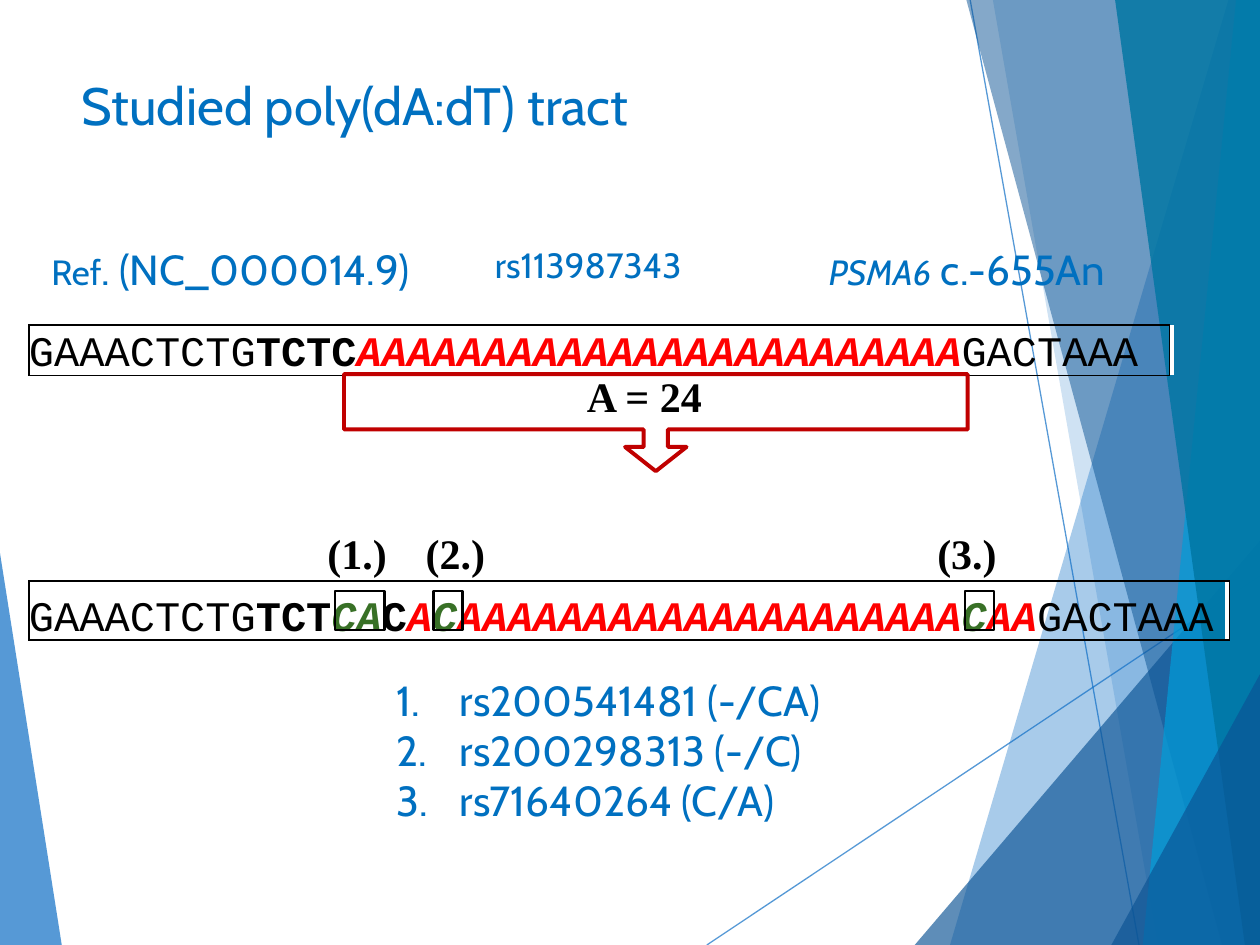
from dataclasses import dataclass

from lxml.etree import SubElement as Sub
from pptx import Presentation
from pptx.dml.color import RGBColor as Rgb
from pptx.enum.shapes import MSO_CONNECTOR as Link, MSO_SHAPE as Kind
from pptx.enum.text import MSO_ANCHOR as Anchor, MSO_AUTO_SIZE as Fit, PP_ALIGN as Align
from pptx.oxml.ns import qn
from pptx.util import Inches, Pt

UNIT = 0.1  # grid step: 100 columns by 75 rows
COLS, ROWS = 100, 75


@dataclass(frozen=True)
class Theme:
    text: str = "0070C0"
    ink: str = "000000"
    paper: str = "FFFFFF"
    red: str = "FF0000"
    green: str = "387026"
    frame: str = "C00000"
    blue: str = "0F6FC6"
    navy: str = "0B5394"
    sky: str = "009DD9"
    teal: str = "0076A3"
    sans: str = "Cabin"
    mono: str = "Courier New"
    serif: str = "Times New Roman"
    head: int = 30
    large: int = 24
    small: int = 20


def grid(*vals):
    return [Inches(val * UNIT) for val in vals]


def tint(fill, color, share):
    """Give a solid fill a colour and an opacity in percent."""
    fill.solid()
    fill.fore_color.rgb = Rgb.from_string(color)
    node = fill._xPr.find(qn("a:solidFill"))[0]
    Sub(node, qn("a:alpha"), val=str(share * 1000))


class Deck:
    def __init__(self, theme):
        self.theme = theme
        self.file = Presentation()
        self.file.slide_width, self.file.slide_height = grid(COLS, ROWS)
        self.slide = self.file.slides.add_slide(self.file.slide_layouts[1])
        self.shapes = self.slide.shapes

    # Text
    def run(self, para, text, size=None, font=None, color=None, bold=False, slant=False):
        part = para.add_run()
        part.text = text
        face = part.font
        face.size = Pt(size or self.theme.large)
        face.name = font or self.theme.sans
        face.color.rgb = Rgb.from_string(color or self.theme.text)
        face.bold, face.italic = bold, slant

    def place(self, shape, box):
        """Move a template placeholder to its box, above the backdrop."""
        self.shapes._spTree.append(shape._element)
        shape.left, shape.top, shape.width, shape.height = grid(*box)
        frame = shape.text_frame
        frame.auto_size = Fit.NONE
        frame.vertical_anchor = Anchor.TOP
        return frame

    def title(self, box, text):
        para = self.place(self.shapes.title, box).paragraphs[0]
        para.alignment = Align.LEFT
        self.run(para, text, self.theme.head)

    def steps(self, box, items):
        frame = self.place(self.slide.placeholders[1], box)
        for num, item in enumerate(items):
            para = frame.add_paragraph() if num else frame.paragraphs[0]
            para.space_before = Pt(0)
            self.run(para, item)
            props = para._p.get_or_add_pPr()
            props.set("marL", str(Inches(0.5)))
            props.set("indent", str(-Inches(0.5)))
            Sub(Sub(props, qn("a:buClr")), qn("a:srgbClr"), val=self.theme.text)
            Sub(props, qn("a:buFont"), typeface=self.theme.sans)
            Sub(props, qn("a:buAutoNum"), type="arabicPeriod")

    def label(self, box, *runs):
        frame = self.shapes.add_textbox(*grid(*box)).text_frame
        frame.word_wrap = False
        frame.auto_size = Fit.SHAPE_TO_FIT_TEXT
        for text, look in runs:
            self.run(frame.paragraphs[0], text, **look)

    # Shapes
    def outline(self, kind, box, color, width, adjust=()):
        shape = self.shapes.add_shape(kind, *grid(*box))
        shape.shadow.inherit = False
        shape.fill.background()
        shape.line.color.rgb = Rgb.from_string(color)
        shape.line.width = Pt(width)
        for num, val in enumerate(adjust):
            shape.adjustments[num] = val

    def shard(self, color, share, *points):
        first, *rest = [grid(*point) for point in points]
        pen = self.shapes.build_freeform(*first)
        pen.add_line_segments(rest, close=True)
        shape = pen.convert_to_shape()
        shape.shadow.inherit = False
        tint(shape.fill, color, share)
        shape.line.fill.background()

    def line(self, start, end, color, share):
        link = self.shapes.add_connector(Link.STRAIGHT, *grid(*start, *end))
        Sub(link._element.spPr, qn("a:effectLst"))
        link.line.width = Pt(0.75)
        tint(link.line.fill, color, share)
        # the effect list must follow the line
        props = link._element.spPr
        props.append(props.find(qn("a:effectLst")))

    # Tables
    def edge(self, cell, sides):
        props = cell._tc.get_or_add_tcPr()
        for side in "LRTB":
            rule = Sub(props, qn("a:ln" + side), w=str(Pt(1)))
            if side in sides:
                Sub(Sub(rule, qn("a:solidFill")), qn("a:srgbClr"), val=self.theme.ink)
            else:
                Sub(rule, qn("a:noFill"))

    def strand(self, box, runs, sides):
        """A sequence cell followed by a narrow white end cell."""
        table = self.shapes.add_table(1, 2, *grid(*box)).table
        table.first_row = table.horz_banding = False
        end = 0.4
        table.columns[0].width, table.columns[1].width = grid(box[2] - end, end)
        for num, edges in enumerate(sides):
            cell = table.cell(0, num)
            cell.margin_left = cell.margin_right = cell.margin_bottom = 0
            cell.margin_top = Inches(0.04)
            cell.vertical_anchor = Anchor.BOTTOM
            self.edge(cell, edges)
        table.cell(0, 0).fill.background()
        table.cell(0, 1).fill.solid()
        table.cell(0, 1).fill.fore_color.rgb = Rgb.from_string(self.theme.paper)
        para = table.cell(0, 0).text_frame.paragraphs[0]
        para.line_spacing = 0.89
        for text, look in runs:
            self.run(para, text, font=self.theme.mono, **look)


def main():
    theme = Theme()
    deck = Deck(theme)

    # Backdrop
    deck.shard(theme.blue, 70, (0, 43.9), (4.9, ROWS), (0, ROWS))
    deck.line((56.1, ROWS), (COLS, 45.7), theme.blue, 70)
    deck.line((77, 0), (90.4, ROWS), theme.blue, 70)
    right = (COLS, ROWS), (COLS, 0)
    for color, share, top, foot in (
        (theme.blue, 36, 97.5, 75.4),
        (theme.blue, 20, 78.8, 91.9),
    ):
        deck.shard(color, share, (top, 0), (foot, ROWS), *right)
    deck.shard(theme.navy, 66, (72.6, ROWS), (COLS, 42.9), (COLS, ROWS))
    for color, share, top, foot in (
        (theme.navy, 50, 76.7, 97),
        (theme.sky, 70, 98.1, 90.7),
        (theme.teal, 82, 88.5, 98.8),
    ):
        deck.shard(color, share, (top, 0), (foot, ROWS), *right)
    deck.shard(theme.navy, 66, (88.2, ROWS), (COLS, 53.5), (COLS, ROWS))

    # Looks of the sequence parts
    plain = dict(color=theme.ink)
    bold = dict(color=theme.ink, bold=True)
    tract = dict(color=theme.red, bold=True, slant=True)
    change = dict(color=theme.green, bold=True, slant=True)
    start, tail = ("GAAACTCTG", plain), ("GACTAAA", plain)
    note = dict(font=theme.serif, **bold)

    # Variant strand with its marked changes
    deck.strand((2.3, 46.1, 95.3, 4.7), (
        start, ("TCT", bold), ("CA", change), ("C", bold), ("A", tract),
        ("C", change), ("A" * 20, tract), ("C", change), ("AA", tract), tail,
    ), ("LTB", "RTB"))
    marks = (26.6, 3.9, 25), (34.4, 2.3, 32.8), (76.6, 2.3, 73.4)
    for num, (left, width, tag) in enumerate(marks, 1):
        deck.outline(Kind.RECTANGLE, (left, 46.9, width, 3.1), theme.ink, 1.5)
        deck.label((tag, 41.4, 6.8, 5.1), (f"({num}.)", note))

    # Reference strand with its callout
    deck.strand((2.3, 25.8, 90.9, 4),
                (start, ("TCTC", bold), ("A" * 24, tract), tail), ("LRTB", "L"))
    deck.label((45.6, 28.9, 11.5, 5.1), ("A = 24", note))
    deck.outline(Kind.DOWN_ARROW_CALLOUT, (27.3, 29.7, 49.5, 7.7),
                 theme.frame, 2.25, (0.25, 0.317, 0.25, 0.57))

    # Title, captions and list
    small = dict(size=theme.small)
    deck.title((5.5, 5.3, 86.6, 6.1), "Studied poly(dA:dT) tract")
    deck.label((3.1, 18.8, 31.2, 5.1), ("Ref", small), (". (NC_000014.9)", {}))
    deck.label((38.3, 18.8, 19.5, 4.4), ("rs113987343", small))
    deck.label((64.8, 18.8, 25.8, 5),
               ("PSMA6", dict(slant=True, **small)), (" c.-655An", {}))
    deck.steps((30.5, 53, 37.7, 13.2),
               ("rs200541481 (-/CA)", "rs200298313 (-/C)", "rs71640264 (C/A)"))

    deck.file.save("out.pptx")


if __name__ == "__main__":
    main()
